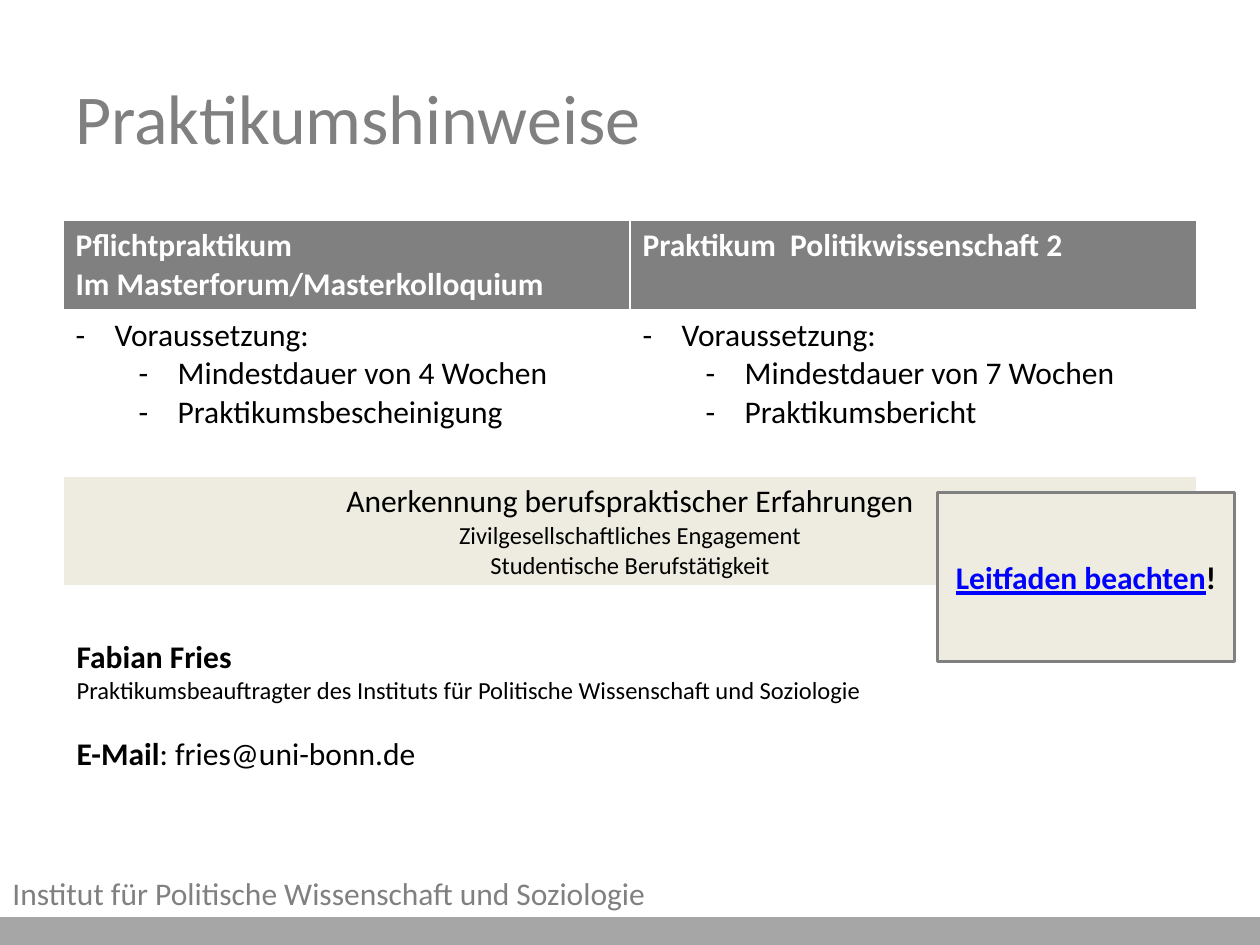
from dataclasses import dataclass

from lxml import etree
from pptx import Presentation
from pptx import util as u
from pptx.dml.color import RGBColor
from pptx.enum import shapes, text
from pptx.oxml.ns import qn


@dataclass(frozen=True)
class Theme:
    font: str = "Calibri"
    grey: str = "808080"
    bar: str = "A6A6A6"
    sand: str = "EEECE1"
    black: str = "000000"
    white: str = "FFFFFF"
    link: str = "0000FF"
    title: int = 40
    body: int = 18
    small: int = 14


THEME = Theme()


@dataclass
class Span:
    words: str
    size: int = THEME.body
    color: str = THEME.black
    bold: bool = False
    underline: bool = False


@dataclass
class Para:
    spans: list
    centered: bool = False
    dash_level: int = -1  # -1 means no dash
    before: int = 0


def rgb(color):
    return RGBColor.from_string(color)


def add_dash(para, level):
    """Hang the paragraph on a dash, half an inch deeper per level."""
    props = para._p.get_or_add_pPr()
    props.set("marL", str(u.Inches(0.31 + 0.5 * level)))
    props.set("indent", str(u.Inches(-0.31)))
    etree.SubElement(props, qn("a:buFont"), typeface=THEME.font)
    etree.SubElement(props, qn("a:buChar"), char="-")
    para.level = level


def write(frame, paras):
    frame.word_wrap = True
    for index, content in enumerate(paras):
        para = frame.paragraphs[0] if index == 0 else frame.add_paragraph()
        para.alignment = text.PP_ALIGN.CENTER if content.centered else text.PP_ALIGN.LEFT
        if content.before:
            para.space_before = u.Pt(content.before)
        if content.dash_level >= 0:
            add_dash(para, content.dash_level)
        for span in content.spans:
            run = para.add_run()
            run.text = span.words
            run.font.name = THEME.font
            run.font.size = u.Pt(span.size)
            run.font.bold = span.bold
            run.font.underline = span.underline
            run.font.color.rgb = rgb(span.color)


def add_text(page, left, top, width, height, paras, anchor=text.MSO_ANCHOR.TOP):
    box = page.shapes.add_textbox(*map(u.Inches, (left, top, width, height)))
    box.text_frame.vertical_anchor = anchor
    write(box.text_frame, paras)


def add_panel(page, left, top, width, height, fill, line, paras=()):
    panel = page.shapes.add_shape(
        shapes.MSO_SHAPE.RECTANGLE, *map(u.Inches, (left, top, width, height)))
    panel.shadow.inherit = False
    panel.fill.solid()
    panel.fill.fore_color.rgb = rgb(fill)
    panel.line.color.rgb = rgb(line)
    panel.line.width = u.Pt(2)
    panel.text_frame.vertical_anchor = text.MSO_ANCHOR.MIDDLE
    write(panel.text_frame, paras)


def fill_cell(cell, paras, color=None):
    if color:
        cell.fill.solid()
        cell.fill.fore_color.rgb = rgb(color)
    else:
        cell.fill.background()
    write(cell.text_frame, paras)


def add_internship_table(page):
    columns = [
        (["Pflichtpraktikum", "Im Masterforum/Masterkolloquium"],
         ["Mindestdauer von 4 Wochen", "Praktikumsbescheinigung"]),
        (["Praktikum  Politikwissenschaft 2"],
         ["Mindestdauer von 7 Wochen", "Praktikumsbericht"]),
    ]
    heights = [0.71, 1.32, 0.87]
    table = page.shapes.add_table(
        len(heights), len(columns),
        *map(u.Inches, (0.5, 1.75, 9, sum(heights)))).table
    table.horz_banding = False
    for row, height in zip(table.rows, heights):
        row.height = u.Inches(height)

    # Header and requirements of each kind of internship
    for column, (heading, demands) in enumerate(columns):
        fill_cell(table.cell(0, column),
                  [Para([Span(line, color=THEME.white, bold=True)]) for line in heading],
                  THEME.grey)
        fill_cell(table.cell(1, column),
                  [Para([Span("Voraussetzung:")], dash_level=0)]
                  + [Para([Span(demand)], dash_level=1) for demand in demands])

    # Shared bottom row
    shared = table.cell(2, 0)
    shared.merge(table.cell(2, 1))
    fill_cell(shared, [
        Para([Span("Anerkennung berufspraktischer Erfahrungen")], centered=True),
        Para([Span("Zivilgesellschaftliches Engagement", THEME.small)], centered=True),
        Para([Span("Studentische Berufstätigkeit", THEME.small)], centered=True),
    ], THEME.sand)


def main():
    deck = Presentation()
    deck.slide_width, deck.slide_height = u.Inches(10), u.Inches(7.5)
    page = deck.slides.add_slide(deck.slide_layouts[6])

    # Footer
    add_panel(page, 0, 7.29, 10, 0.21, THEME.bar, THEME.bar)
    add_text(page, 0, 6.89, 7.09, 0.4, [
        Para([Span("Institut für Politische Wissenschaft und Soziologie", color=THEME.grey)])])

    # Title
    add_text(page, 0.5, 0.3, 9, 1.25,
             [Para([Span("Praktikumshinweise", THEME.title, THEME.grey)])],
             text.MSO_ANCHOR.MIDDLE)

    add_internship_table(page)

    # Contact
    add_text(page, 0.51, 5.01, 8.98, 1.18, [
        Para([Span("Fabian Fries", bold=True)]),
        Para([Span("Praktikumsbeauftragter des Instituts für Politische "
                   "Wissenschaft und Soziologie", THEME.small)]),
        Para([Span("E-Mail", bold=True), Span(": fries@uni-bonn.de")], before=17),
    ])

    # Reminder
    add_panel(page, 7.44, 3.91, 2.36, 1.34, THEME.sand, THEME.grey, [
        Para([Span("Leitfaden beachten", color=THEME.link, bold=True, underline=True),
              Span("!", bold=True)], centered=True)])

    deck.save("out.pptx")


if __name__ == "__main__":
    main()
